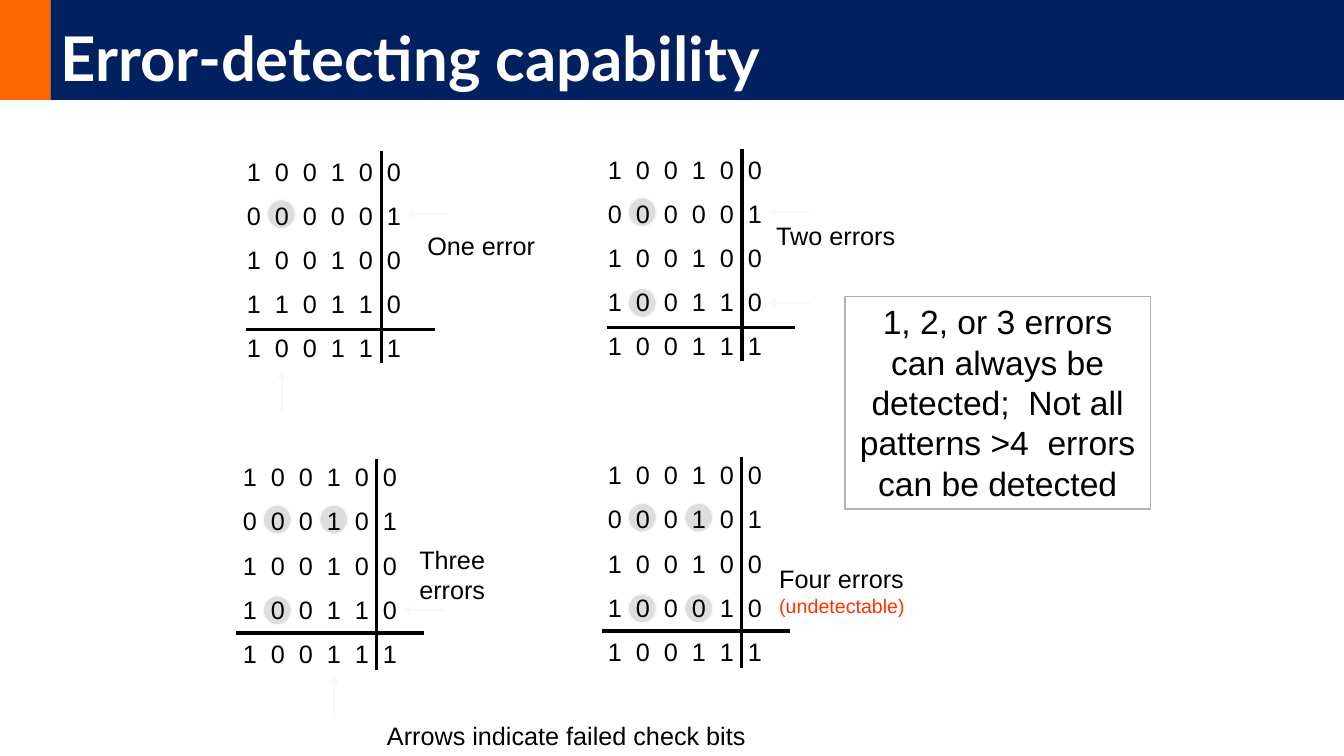
import lxml.etree
import pptx
import pptx.dml.color
import pptx.enum.shapes
import pptx.enum.text
import pptx.oxml.ns
import pptx.util
from pptx.util import Inches

SHAPES = pptx.enum.shapes.MSO_SHAPE
ALIGN = pptx.enum.text.PP_ALIGN
ANCHOR = pptx.enum.text.MSO_ANCHOR
BLACK, PALE, GREY = "000000", "F8F8F8", "DDDDDD"
COLUMN_PITCH, ROW_PITCH, MARK_SIZE = 0.28, 0.45, 0.29

PANELS = [
    dict(left=2.35, top=1.47, rows=["100100", "000001", "100100", "110110", "100111"],
         errors=[(1, 1)], failed_rows=[1], failed_columns=[1],
         cross=(0.09, 1.8, 1.43, 0.03),
         label=[("One error", 18, BLACK)], label_box=(1.79, 0.77, 1.32, 0.4)),
    dict(left=5.93, top=1.45, rows=["100100", "000001", "100100", "100110", "100111"],
         errors=[(1, 1), (3, 1)], failed_rows=[1, 3], failed_columns=[],
         cross=(0.09, 1.8, 1.43, 0.03),
         label=[("Two errors", 18, BLACK)], label_box=(1.67, 0.69, 1.39, 0.4)),
    dict(left=2.31, top=4.5, rows=["100100", "000101", "100100", "100110", "100111"],
         errors=[(1, 1), (1, 3), (3, 1)], failed_rows=[3], failed_columns=[3],
         cross=(0.03, 1.78, 1.42, 0.05),
         label=[("Three errors", 18, BLACK)], label_box=(1.75, 0.85, 1.51, 0.7)),
    dict(left=5.93, top=4.48, rows=["100100", "000101", "100100", "100010", "100111"],
         errors=[(1, 1), (1, 3), (3, 1), (3, 3)], failed_rows=[], failed_columns=[],
         cross=(0.04, 1.78, 1.42, 0.05),
         label=[("Four errors ", 18, BLACK), ("(undetectable)", 14, "FF3300")],
         label_box=(1.7, 1.06, 1.51, 0.63)),
]


def color(value):
    """Return the colour for a hex string."""
    return pptx.dml.color.RGBColor.from_string(value)


def add_run(paragraph, text, size=18, fill=BLACK, font="Arial", bold=False):
    """Add a formatted run of text to a paragraph."""
    run = paragraph.add_run()
    run.text = text
    run.font.size = pptx.util.Pt(size)
    run.font.name = font
    run.font.bold = bold
    run.font.color.rgb = color(fill)


def add_text(slide, box, paragraphs, wrap=True, space_after=0, inset_top=0.05):
    """Add a text box whose paragraphs are lists of (text, size, colour)."""
    frame = slide.shapes.add_textbox(*map(Inches, box)).text_frame
    frame.word_wrap = wrap
    frame.margin_top = Inches(inset_top)
    for index, runs in enumerate(paragraphs):
        paragraph = frame.paragraphs[0] if index == 0 else frame.add_paragraph()
        paragraph.space_after = pptx.util.Pt(space_after)
        for text, size, fill in runs:
            add_run(paragraph, text, size=size, fill=fill)


def add_shape(slide, kind, box, fill=None, line=None):
    """Add a flat preset shape with an optional fill and outline."""
    shape = slide.shapes.add_shape(kind, *map(Inches, box))
    shape.shadow.inherit = False
    if fill:
        shape.fill.solid()
        shape.fill.fore_color.rgb = color(fill)
    else:
        shape.fill.background()
    if line:
        shape.line.color.rgb = color(line)
        shape.line.width = pptx.util.Pt(1)
    else:
        shape.line.fill.background()
    return shape


def add_line(slide, start, end, fill=BLACK, width=2.25, arrow=False):
    """Add a straight line, with an arrowhead at its end if asked."""
    connector = slide.shapes.add_connector(
        pptx.enum.shapes.MSO_CONNECTOR.STRAIGHT, *map(Inches, start + end))
    connector.line.color.rgb = color(fill)
    connector.line.width = pptx.util.Pt(width)
    qualified = pptx.oxml.ns.qn
    properties = connector.element.spPr
    if arrow:
        outline = properties.find(qualified("a:ln"))
        lxml.etree.SubElement(outline, qualified("a:tailEnd"), type="triangle")
    lxml.etree.SubElement(properties, qualified("a:effectLst"))


def add_header(slide, left, top, width, height):
    """Place the orange block and the title bar across the given box."""
    block = 0.5
    add_shape(slide, SHAPES.RECTANGLE, (left, top, block, height), fill="FF6600")
    title = slide.shapes.title
    title.left, title.top = Inches(left + block), Inches(top)
    title.width, title.height = Inches(width - block), Inches(height)
    title.fill.solid()
    title.fill.fore_color.rgb = color("002060")
    frame = title.text_frame
    frame.auto_size = pptx.enum.text.MSO_AUTO_SIZE.NONE
    frame.vertical_anchor = ANCHOR.BOTTOM
    paragraph = frame.paragraphs[0]
    paragraph.alignment = ALIGN.LEFT
    paragraph.line_spacing = 0.9
    add_run(paragraph, "Error-detecting capability", size=44, fill="FFFFFF",
            font="Lato", bold=True)


def add_panel(slide, left, top, rows, errors, failed_rows, failed_columns,
              cross, label, label_box):
    """Place one parity grid with its marked errors, arrows and label."""
    def mark_corner(row, column):
        """Return the top left corner of the mark behind a bit."""
        return left + 0.02 + COLUMN_PITCH * column, top + 0.06 + ROW_PITCH * row

    for row, column in errors:
        add_shape(slide, SHAPES.OVAL,
                  mark_corner(row, column) + (MARK_SIZE - 0.01, MARK_SIZE),
                  fill=GREY, line=PALE)
    bits = [[("  ".join(row), 18, BLACK)] for row in rows]
    add_text(slide, (left, top, 2.08, 2.21), bits, space_after=9.9, inset_top=0.08)

    rule_left, rule_top, divider_left, divider_top = cross
    across, down = left + rule_left, top + rule_top
    add_line(slide, (across, down), (across + 1.87, down))
    across, down = left + divider_left, top + divider_top
    add_line(slide, (across, down), (across, down + 2.1))

    for row in failed_rows:
        middle = mark_corner(row, 0)[1] + MARK_SIZE / 2
        add_line(slide, (left + 2.1, middle), (left + 1.68, middle),
                 fill=PALE, width=1.5, arrow=True)
    for column in failed_columns:
        middle = mark_corner(0, column)[0] + MARK_SIZE / 2
        add_line(slide, (middle, top + 2.62), (middle, top + 2.2),
                 fill=PALE, width=1.5, arrow=True)

    label_left, label_top, width, height = label_box
    add_text(slide, (left + label_left, top + label_top, width, height), [label])


def add_conclusion(slide, box):
    """Place the outlined conclusion in the given box."""
    frame = add_shape(slide, SHAPES.RECTANGLE, box, line="B2B2B2").text_frame
    frame.word_wrap = True
    frame.vertical_anchor = ANCHOR.TOP
    paragraph = frame.paragraphs[0]
    paragraph.alignment = ALIGN.CENTER
    add_run(paragraph, "1, 2, or 3 errors can always be detected;  "
            "Not all patterns >4  errors can be detected", size=24)


def main():
    """Build the slide and save it."""
    presentation = pptx.Presentation()
    presentation.slide_width = Inches(13.33)
    presentation.slide_height = Inches(7.5)
    slide = presentation.slides.add_slide(presentation.slide_layouts[5])
    add_header(slide, 0, 0, 13.33, 0.99)
    for panel in PANELS:
        add_panel(slide, **panel)
    add_text(slide, (3.74, 7.1, 3.76, 0.4),
             [[("Arrows indicate failed check bits", 18, BLACK)]], wrap=False)
    add_conclusion(slide, (8.38, 2.94, 3.03, 2.11))
    presentation.save("out.pptx")


if __name__ == "__main__":
    main()
